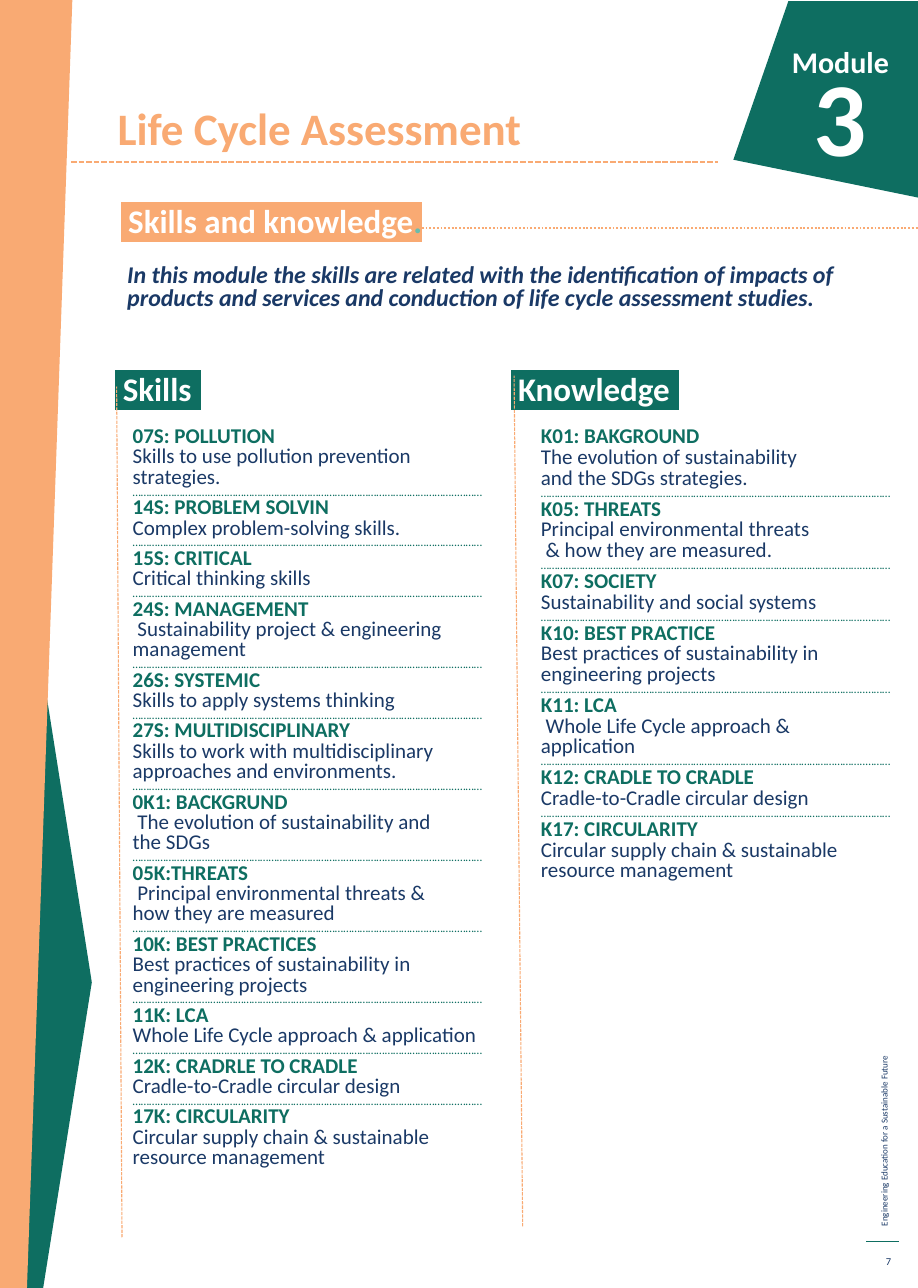
"""Build the module page listing the skills and knowledge of life cycle assessment."""
import lxml.etree
import pptx
import pptx.dml.color
import pptx.enum.dml
import pptx.enum.shapes
import pptx.enum.text
import pptx.oxml.ns
import pptx.util

GREEN, ORANGE, NAVY, TEAL, WHITE = "0E6E61", "F9AA73", "1A3966", "69BCAC", "FFFFFF"
LEADER = "……………………….……………………………………………………………………………..………"
LEFT, RIGHT = pptx.enum.text.PP_ALIGN.LEFT, pptx.enum.text.PP_ALIGN.RIGHT
TOP, MIDDLE, BOTTOM = (getattr(pptx.enum.text.MSO_ANCHOR, name) for name in ("TOP", "MIDDLE", "BOTTOM"))
DOT = pptx.enum.dml.MSO_LINE.ROUND_DOT
DASH = pptx.enum.dml.MSO_LINE.SQUARE_DOT

SKILLS = [
    ("07S: POLLUTION", "Skills to use pollution prevention", "strategies."),
    ("14S: PROBLEM SOLVIN", "Complex problem-solving skills."),
    ("15S: CRITICAL", "Critical thinking skills"),
    ("24S: MANAGEMENT", " Sustainability project & engineering management"),
    ("26S: SYSTEMIC", "Skills to apply systems thinking"),
    ("27S: MULTIDISCIPLINARY", "Skills to work with multidisciplinary approaches and environments."),
    ("0K1: BACKGRUND", " The evolution of sustainability and", "the SDGs"),
    ("05K:THREATS", " Principal environmental threats &", "how they are measured"),
    ("10K: BEST PRACTICES", "Best practices of sustainability in", "engineering projects"),
    ("11K: LCA", "Whole Life Cycle approach & application"),
    ("12K: CRADRLE TO CRADLE", "Cradle-to-Cradle circular design"),
    ("17K: CIRCULARITY", "Circular supply chain & sustainable", "resource management"),
]
KNOWLEDGE = [
    ("K01: BAKGROUND", "The evolution of sustainability", "and the SDGs strategies."),
    ("K05: THREATS", "Principal environmental threats", " & how they are measured."),
    ("K07: SOCIETY", "Sustainability and social systems"),
    ("K10: BEST PRACTICE", "Best practices of sustainability in engineering projects"),
    ("K11: LCA", " Whole Life Cycle approach &", "application"),
    ("K12: CRADLE TO CRADLE", "Cradle-to-Cradle circular design"),
    ("K17: CIRCULARITY", "Circular supply chain & sustainable resource management"),
]


def rgb(value):
    return pptx.dml.color.RGBColor.from_string(value)


class Page:
    """Draw on one slide with a grid of 85 columns and 119.3 rows."""

    columns, rows, font = 85, 119.3, "Calibri"

    def __init__(self, presentation):
        self.column = presentation.slide_width / self.columns
        self.row = presentation.slide_height / self.rows
        self.slide = presentation.slides.add_slide(presentation.slide_layouts[6])

    def place(self, *lengths):
        return [round(length * (self.row if index % 2 else self.column))
                for index, length in enumerate(lengths)]

    def outline(self, points, color):
        corners = [self.place(*point) for point in points]
        builder = self.slide.shapes.build_freeform(*corners[0], scale=1.0)
        builder.add_line_segments(corners[1:], close=True)
        shape = builder.convert_to_shape()
        shape.shadow.inherit = False
        shape.fill.solid()
        shape.fill.fore_color.rgb = rgb(color)
        shape.line.fill.background()

    def line(self, ends, color, width, dash=None):
        connector = self.slide.shapes.add_connector(
            pptx.enum.shapes.MSO_CONNECTOR.STRAIGHT, *self.place(*ends))
        connector.line.color.rgb = rgb(color)
        connector.line.width = pptx.util.Pt(width)
        if dash:
            connector.line.dash_style = dash
        lxml.etree.SubElement(connector._element.spPr, pptx.oxml.ns.qn("a:effectLst"))

    def format_run(self, run, size, color, bold=True, italic=False, highlight=None):
        run.font.name = self.font
        run.font.size = pptx.util.Pt(size)
        run.font.bold, run.font.italic = bold, italic
        run.font.color.rgb = rgb(color)
        if highlight:
            mark = lxml.etree.Element(pptx.oxml.ns.qn("a:highlight"))
            lxml.etree.SubElement(mark, pptx.oxml.ns.qn("a:srgbClr")).set("val", highlight)
            run._r.rPr.find(pptx.oxml.ns.qn("a:solidFill")).addnext(mark)

    def text(self, box, wording, size, color, align=LEFT, anchor=TOP, spacing=None,
             before=0, rotation=0, **look):
        shape = self.slide.shapes.add_textbox(*self.place(*box))
        shape.rotation = rotation
        frame = shape.text_frame
        frame.word_wrap = True
        frame.vertical_anchor = anchor
        frame.text = wording
        paragraph = frame.paragraphs[0]
        paragraph.alignment = align
        paragraph.space_before = pptx.util.Pt(before)
        if spacing:
            paragraph.line_spacing = spacing
        self.format_run(paragraph.runs[0], size, color, **look)
        return frame

    def label(self, box, wording, ending, ending_color, highlight, **layout):
        frame = self.text(box, wording, 22, WHITE, highlight=highlight, **layout)
        run = frame.paragraphs[0].add_run()
        run.text = ending
        self.format_run(run, 22, ending_color, highlight=highlight)

    def entries(self, box, items, spacing):
        lines = []
        for heading, *details in items:
            if lines:
                lines.append((LEADER, 8, GREEN, False, spacing - 7))
            lines.append((heading, 14, GREEN, True, spacing))
            lines.extend((detail, 14, NAVY, False, spacing) for detail in details)
        shape = self.slide.shapes.add_textbox(*self.place(*box))
        frame = shape.text_frame
        frame.word_wrap = True
        frame.text = "\n".join(line[0] for line in lines)
        for paragraph, (_, size, color, bold, height) in zip(frame.paragraphs, lines):
            paragraph.line_spacing = pptx.util.Pt(height)
            paragraph._p.get_or_add_pPr().set("marL", str(pptx.util.Inches(0.01)))
            self.format_run(paragraph.runs[0], size, color, bold)


def main():
    presentation = pptx.Presentation()
    presentation.slide_width = pptx.util.Inches(8.5)
    presentation.slide_height = pptx.util.Inches(11.93)
    page = Page(presentation)

    page.text((59.4, 91.1, 44.9, 2), "Engineering Education for a Sustainable Future",
              6, NAVY, rotation=270, bold=False)
    page.line((80.2, 115, 83.2, 115), GREEN, 0.75)
    page.text((80.2, 115.4, 3.3, 2.9), "7", 7, NAVY, align=RIGHT, anchor=MIDDLE, bold=False)
    page.outline([(4, 119.3), (2.3, 119.3), (2.3, 51.7), (8.3, 89.7), (8.5, 91)], GREEN)
    page.outline([(0, 0), (6.7, 0), (2.5, 119.3), (0, 119.3)], ORANGE)

    page.text((10.8, 24.2, 69.4, 6.7),
              "In this module the skills are related with the identification of impacts of "
              "products and services and conduction of life cycle assessment studies.",
              16, NAVY, spacing=pptx.util.Pt(14.8), italic=True)
    page.line((25.2, 21.1, 85, 21.1), ORANGE, 1.25, DOT)
    page.label((10.2, 18.5, 66.4, 6.5), " Skills and knowledge", ".", TEAL, ORANGE,
               spacing=0.9, before=8.5)

    for title, left, items, body, spacing, rule in (
            (" Skills", 9.7, SKILLS, (11.2, 39.1, 39.1, 80), 13.6, (11.3, 114.6, 10.8, 35.8)),
            (" Knowledge", 46.3, KNOWLEDGE, (49, 39.1, 35.8, 51.1), 13.8, (48.4, 113.6, 47.6, 34.8))):
        page.label((left, 33.6, 29.6, 6.5), title, ":", GREEN, GREEN)
        page.entries(body, items, spacing)
        page.line(rule, ORANGE, 0.75, DASH)

    page.outline([(85, 0.1), (73, 0.1), (67.9, 14.8), (85, 18.3)], GREEN)
    page.text((65.3, 3.5, 18, 14.2), "Module", 20, WHITE, align=RIGHT, before=22.7)
    page.line((6.6, 15, 66.5, 15), ORANGE, 1.25, DASH)
    page.text((63.2, 4.3, 18, 14.2), "3", 70, WHITE, align=RIGHT, before=22.7)
    page.text((9.9, 3.8, 39.6, 11), "Life Cycle Assessment", 30, ORANGE,
              anchor=BOTTOM, spacing=pptx.util.Pt(26.8))
    presentation.save("out.pptx")


if __name__ == "__main__":
    main()
